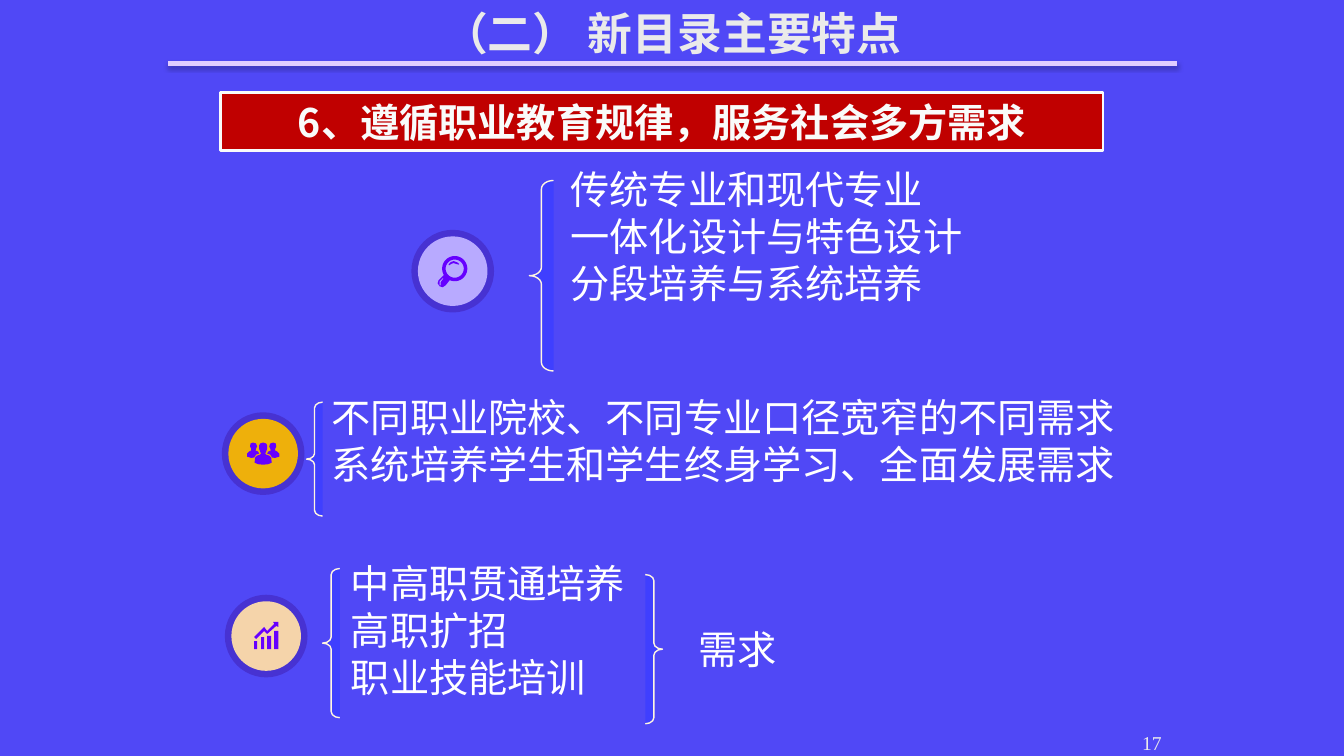
"""Build the slide on how the new catalogue follows vocational education."""
import math
from dataclasses import dataclass

import lxml.etree
import pptx
import pptx.dml.color
import pptx.enum.shapes
import pptx.enum.text
import pptx.oxml.ns
import pptx.util

Inches = pptx.util.Inches
Pt = pptx.util.Pt
qn = pptx.oxml.ns.qn
MSO_SHAPE = pptx.enum.shapes.MSO_SHAPE
ALIGN = pptx.enum.text.PP_ALIGN
ANCHOR = pptx.enum.text.MSO_ANCHOR
Points = list[tuple[float, float]]

CJK = "Noto Sans CJK SC"
ICON = "6600FF"


@dataclass
class TextBlock:
    """Lines of text in a box."""
    left: float
    top: float
    width: float
    height: float
    lines: list[str]


@dataclass
class Brace:
    """A curly brace."""
    left: float
    top: float
    width: float
    height: float
    rotation: int = 0


@dataclass
class Badge:
    """A disc with an icon whose points are hundredths of an inch from its centre."""
    x: float
    y: float
    color: str
    contours: list[Points]


def circle(x: float, y: float, radius: float, turn: int = 1) -> Points:
    """Return points around a circle, reversed for a hole."""
    angles = [turn * math.tau * i / 40 for i in range(40)]
    return [(x + radius * math.cos(a), y + radius * math.sin(a)) for a in angles]


def mirror(points: Points) -> Points:
    """Return the points flipped left to right, keeping the winding."""
    return [(-x, y) for x, y in reversed(points)]


def bar(left: float, right: float, top: float) -> Points:
    """Return a bar standing on the chart icon's base."""
    return [(left, top), (right, top), (right, 13), (left, 13)]


SIDE_PERSON = [(-16, 3), (-16, 0), (-14, -2), (-12, -3), (-12, -5), (-13, -7), (-12.5, -10),
               (-10, -11), (-7, -10), (-6, -7), (-7, -5), (-7.5, -3), (-5, -2), (-4, 0),
               (-7, 1), (-9, 4), (-12, 4.2)]
HALF_PERSON = [(0, 11), (-5, 10.5), (-8.5, 9), (-8, 4), (-6, 2), (-3, 1), (-2, 0), (-3, -2),
               (-4, -5), (-4, -8), (-3, -10), (0, -11)]
PEOPLE = [SIDE_PERSON, mirror(SIDE_PERSON), HALF_PERSON + mirror(HALF_PERSON)]
MAGNIFIER = [
    circle(2, -2.5, 12.5), circle(2, -2.5, 9, -1),
    [(-9, 4), (-6.5, 6.8), (-3, 9), (-7, 14), (-10, 16), (-13, 15), (-15, 12), (-14, 9)],
    [(-9, 7), (-10, 7), (-13, 10), (-13, 14), (-12, 14), (-12, 11)],
    [(-4, -6), (-4, -7), (-2, -9), (1, -10), (5, -8.5), (6.5, -7), (6, -6.5), (4, -7),
     (1, -8), (-2, -7), (-3, -6)],
]
GROWTH = [
    [(7, -14), (8, -12), (1, -5), (-2, -9), (-12, 1), (-10, 3), (-2, -5), (1, -2), (10, -10),
     (12, -9), (12, -14)],
    bar(8, 12, -5), bar(1, 5, 0), bar(-5, -2, 1), bar(-12, -9, 5),
]

BADGES = [
    Badge(4.49, 2.69, "B8AAFF", MAGNIFIER),
    Badge(2.61, 4.5, "EEB00B", PEOPLE),
    Badge(2.64, 6.31, "F5D4AA", GROWTH),
]
BRACES = [
    Brace(5.25, 1.79, 0.24, 1.89),
    Brace(3.04, 3.99, 0.16, 1.13),
    Brace(3.2, 5.64, 0.17, 1.48),
    Brace(6.4, 5.7, 0.17, 1.48, 180),
]
LISTS = [
    TextBlock(5.56, 1.55, 6.06, 1.89, ["传统专业和现代专业", "一体化设计与特色设计", "分段培养与系统培养"]),
    TextBlock(3.19, 3.81, 8.04, 1.67, ["不同职业院校、不同专业口径宽窄的不同需求",
                                       "系统培养学生和学生终身学习、全面发展需求"]),
    TextBlock(3.38, 5.46, 3.25, 1.67, ["中高职贯通培养", "高职扩招", "职业技能培训"]),
    TextBlock(6.83, 6.11, 1.31, 0.92, ["需求"]),
]


def rgb(value: str) -> pptx.dml.color.RGBColor:
    """Turn a hex string into a colour."""
    return pptx.dml.color.RGBColor.from_string(value)


def place(sp, left: float, top: float, width: float, height: float) -> None:
    """Move and size a shape in inches."""
    sp.left, sp.top, sp.width, sp.height = map(Inches, (left, top, width, height))


def write(sp, lines: list[str], size: int, color: str, align, anchor, bold: bool = False,
          font: str = CJK, pitch: float | None = None) -> None:
    """Fill a shape with plain paragraphs of one format."""
    tf = sp.text_frame
    tf.text = "\n".join(lines)
    tf.word_wrap = True
    tf.auto_size = pptx.enum.text.MSO_AUTO_SIZE.NONE
    tf.vertical_anchor = anchor
    for p in tf.paragraphs:
        p.alignment = align
        p.space_before = Pt(0)
        if pitch:
            p.line_spacing = Pt(pitch)
        p.font.size, p.font.bold, p.font.name = Pt(size), bold, font
        p.font.color.rgb = rgb(color)
        pPr = p._p.pPr
        pPr.set("marL", "0")
        pPr.set("indent", "0")
        defaults = pPr.find(qn("a:defRPr"))
        defaults.addprevious(lxml.etree.Element(qn("a:buNone")))
        lxml.etree.SubElement(defaults, qn("a:ea"), typeface=font)


def paint(sp, fill: str, line: str | None = None, width: float = 1) -> None:
    """Set a shape's fill and outline and drop its shadow."""
    sp.shadow.inherit = False
    sp.fill.solid()
    sp.fill.fore_color.rgb = rgb(fill)
    if line:
        sp.line.color.rgb = rgb(line)
        sp.line.width = Pt(width)
    else:
        sp.line.fill.background()


def add_shape(slide, kind, left: float, top: float, width: float, height: float):
    """Add a preset shape in inches."""
    return slide.shapes.add_shape(kind, *map(Inches, (left, top, width, height)))


def add_badge(slide, badge: Badge) -> None:
    """Draw a see-through halo, a disc and its icon."""
    for size, color in ((0.82, "330080"), (0.69, badge.color)):
        sp = add_shape(slide, MSO_SHAPE.OVAL, badge.x - size / 2, badge.y - size / 2, size, size)
        paint(sp, color)
        if size == 0.82:
            tint = sp._element.spPr.find(qn("a:solidFill"))[0]
            lxml.etree.SubElement(tint, qn("a:alpha"), val="30000")
    contours = [[(Inches(badge.x + x / 100), Inches(badge.y + y / 100)) for x, y in points]
                for points in badge.contours]
    builder = slide.shapes.build_freeform(*contours[0][0])
    for i, points in enumerate(contours):
        if i:
            builder.move_to(*points[0])
        builder.add_line_segments(points[1:], close=True)
    paint(builder.convert_to_shape(), ICON)


def add_rule(slide) -> None:
    """Draw the shadowed line under the title."""
    rule = slide.shapes.add_connector(pptx.enum.shapes.MSO_CONNECTOR.STRAIGHT,
                                      *map(Inches, (1.67, 0.63, 11.67, 0.63)))
    rule.line.color.rgb = rgb("E0CCFF")
    rule.line.width = Pt(3)
    effects = lxml.etree.SubElement(rule._element.spPr, qn("a:effectLst"))
    shadow = lxml.etree.SubElement(effects, qn("a:outerShdw"), blurRad=str(Pt(3.1)),
                                   dist=str(Pt(1.8)), dir="5400000", rotWithShape="0")
    tint = lxml.etree.SubElement(shadow, qn("a:srgbClr"), val="000000")
    lxml.etree.SubElement(tint, qn("a:alpha"), val="35000")


def main() -> None:
    """Build and save the slide."""
    prs = pptx.Presentation()
    prs.slide_width, prs.slide_height = Inches(13.33), Inches(7.5)
    slide = prs.slides.add_slide(prs.slide_layouts[4])
    slide.background.fill.solid()
    slide.background.fill.fore_color.rgb = rgb("5048F6")

    title = slide.shapes.title
    place(title, 1.67, -0.18, 10, 1)
    write(title, ["（二） 新目录主要特点"], 32, "EAEAEA", ALIGN.CENTER, ANCHOR.MIDDLE, bold=True)
    add_rule(slide)

    banner = add_shape(slide, MSO_SHAPE.RECTANGLE, 2.19, 0.92, 8.75, 0.57)
    paint(banner, "C00000", "F9FBFA", 2)
    write(banner, ["6、遵循职业教育规律，服务社会多方需求"], 28, "F9FBFA", ALIGN.CENTER,
          ANCHOR.MIDDLE, bold=True)

    for badge in BADGES:
        add_badge(slide, badge)
    for brace in BRACES:
        sp = add_shape(slide, MSO_SHAPE.LEFT_BRACE, brace.left, brace.top, brace.width, brace.height)
        sp.adjustments[0] = 0.356
        sp.rotation = brace.rotation
        paint(sp, "3F3FFF", "FFF5E0")
    for idx, block in enumerate(LISTS, start=1):
        body = slide.placeholders[idx]
        place(body, block.left, block.top, block.width, block.height)
        write(body, block.lines, 28, "FFFFFF", ALIGN.LEFT, ANCHOR.TOP, pitch=33.6)
        body.text_frame.margin_top = Inches(0.09)

    number = slide.shapes.add_textbox(*map(Inches, (9.54, 7.08, 2.08, 0.5)))
    write(number, ["17"], 14, "EAEAEA", ALIGN.RIGHT, ANCHOR.BOTTOM, font="Times New Roman")
    number.text_frame.margin_bottom = Inches(0.09)
    prs.save("out.pptx")


if __name__ == "__main__":
    main()
